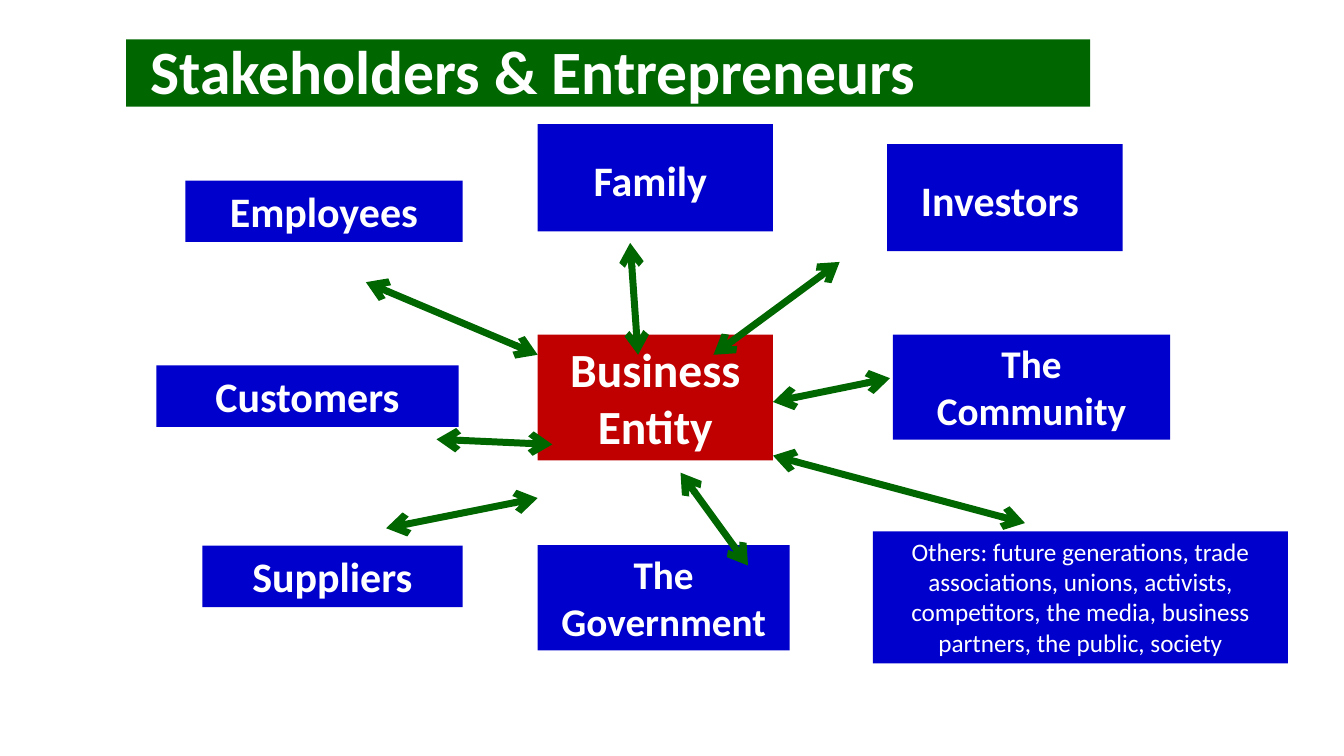
from dataclasses import dataclass
from lxml.etree import SubElement
from pptx import Presentation
from pptx.dml.color import RGBColor
from pptx.enum.shapes import MSO_CONNECTOR as Connector, MSO_SHAPE as Preset
from pptx.enum.text import MSO_ANCHOR as Anchor, MSO_AUTO_SIZE as AutoSize, PP_ALIGN as Align
from pptx.oxml.ns import qn
from pptx.util import Cm, Pt


@dataclass(frozen=True)
class Theme:
    font: str = "Calibri"
    white: RGBColor = RGBColor(0xFF, 0xFF, 0xFF)
    green: RGBColor = RGBColor(0x00, 0x66, 0x00)
    blue: RGBColor = RGBColor(0x00, 0x00, 0xCC)
    red: RGBColor = RGBColor(0xC0, 0x00, 0x00)
    title: int = 44
    hub: int = 34
    group: int = 30
    wide_group: int = 28
    detail: int = 18
    arrow: int = 5


THEME = Theme()

ENTITY = ("Business Entity", 9.61, 5.3, 5.93, 3.17)
SHORT_GROUPS = [
    ("Suppliers", 1.16, 10.62, 6.56, 1.55),
    ("Employees", 0.73, 1.42, 6.99, 1.55),
    ("Customers", 0, 6.08, 7.62, 1.55),
]
LOWERED_GROUPS = [
    ("Family", 9.61, 0, 5.93, 2.7),
    ("Investors", 18.42, 0.5, 5.93, 2.7),
]
WIDE_GROUPS = [
    ("The Government", 9.61, 10.61, 6.35, 2.65),
    ("The Community", 18.56, 5.3, 6.99, 2.65),
]
OTHERS = (
    "Others: future generations, trade associations, unions, activists, "
    "competitors, the media, business partners, the public, society",
    18.06, 10.26, 10.46, 3.33,
)
ARROWS = [
    (11.94, 2.99, 12.14, 5.81),
    (5.28, 3.98, 9.61, 5.81),
    (14.04, 5.81, 17.22, 3.47),
    (15.54, 8.35, 21.89, 10.05),
    (15.54, 7, 18.49, 6.4),
    (5.79, 10.18, 9.61, 9.42),
    (7.06, 7.94, 9.98, 8.07),
    (13.21, 8.78, 14.91, 11.12),
]


def apply(target, values):
    for name, value in values.items():
        setattr(target, name, value)


def write(box, text, size, bold=True, align=Align.CENTER, **frame_format):
    frame = box.text_frame
    apply(frame, {"word_wrap": True, "auto_size": AutoSize.NONE,
                  "vertical_anchor": Anchor.TOP, **frame_format})
    para = frame.paragraphs[0]
    para.alignment = align
    span = para.add_run()
    span.text = text
    apply(span.font, {"name": THEME.font, "size": Pt(size), "bold": bold})
    span.font.color.rgb = THEME.white
    return para


def paint(box, colour):
    box.fill.solid()
    box.fill.fore_color.rgb = colour


def add_title(page, left, top, width, height):
    box = page.shapes.title
    apply(box, {"left": Cm(left), "top": Cm(top),
                "width": Cm(width), "height": Cm(height)})
    paint(box, THEME.green)
    para = write(box, "Stakeholders & Entrepreneurs", THEME.title, align=Align.LEFT,
                 vertical_anchor=Anchor.MIDDLE, margin_left=Cm(0.61),
                 margin_top=Cm(0.23), margin_bottom=Cm(0.13))
    para.line_spacing = 0.9


def add_card(page, origin, card, colour, size, **text_format):
    text, left, top, width, height = card
    box = page.shapes.add_shape(Preset.RECTANGLE, Cm(origin[0] + left),
                                Cm(origin[1] + top), Cm(width), Cm(height))
    box.shadow.inherit = False
    paint(box, colour)
    box.line.fill.background()
    write(box, text, size, **text_format)


def add_arrow(page, origin, ends):
    points = [Cm(origin[index % 2] + end) for index, end in enumerate(ends)]
    arrow = page.shapes.add_connector(Connector.STRAIGHT, *points)
    arrow.line.width = Pt(THEME.arrow)
    arrow.line.color.rgb = THEME.green
    outline = arrow.line._get_or_add_ln()
    for end in ("a:headEnd", "a:tailEnd"):
        SubElement(outline, qn(end), type="arrow")
    SubElement(arrow._element.spPr, qn("a:effectLst"))


def add_stakeholder_map(page, left, top):
    origin = (left, top)
    add_card(page, origin, ENTITY, THEME.red, THEME.hub)
    for card in SHORT_GROUPS:
        add_card(page, origin, card, THEME.blue, THEME.group)
    for card in LOWERED_GROUPS:
        add_card(page, origin, card, THEME.blue, THEME.group,
                 margin_top=Cm(0.77), margin_right=Cm(0.5))
    for card in WIDE_GROUPS:
        add_card(page, origin, card, THEME.blue, THEME.wide_group)
    add_card(page, origin, OTHERS, THEME.blue, THEME.detail, bold=False)
    for ends in ARROWS:
        add_arrow(page, origin, ends)


def main():
    deck = Presentation()
    apply(deck, {"slide_width": Cm(33.87), "slide_height": Cm(19.05)})
    page = deck.slides.add_slide(deck.slide_layouts[5])
    add_title(page, 3.18, 0.99, 24.29, 1.7)
    add_stakeholder_map(page, 3.94, 3.13)
    deck.save("out.pptx")


if __name__ == "__main__":
    main()
